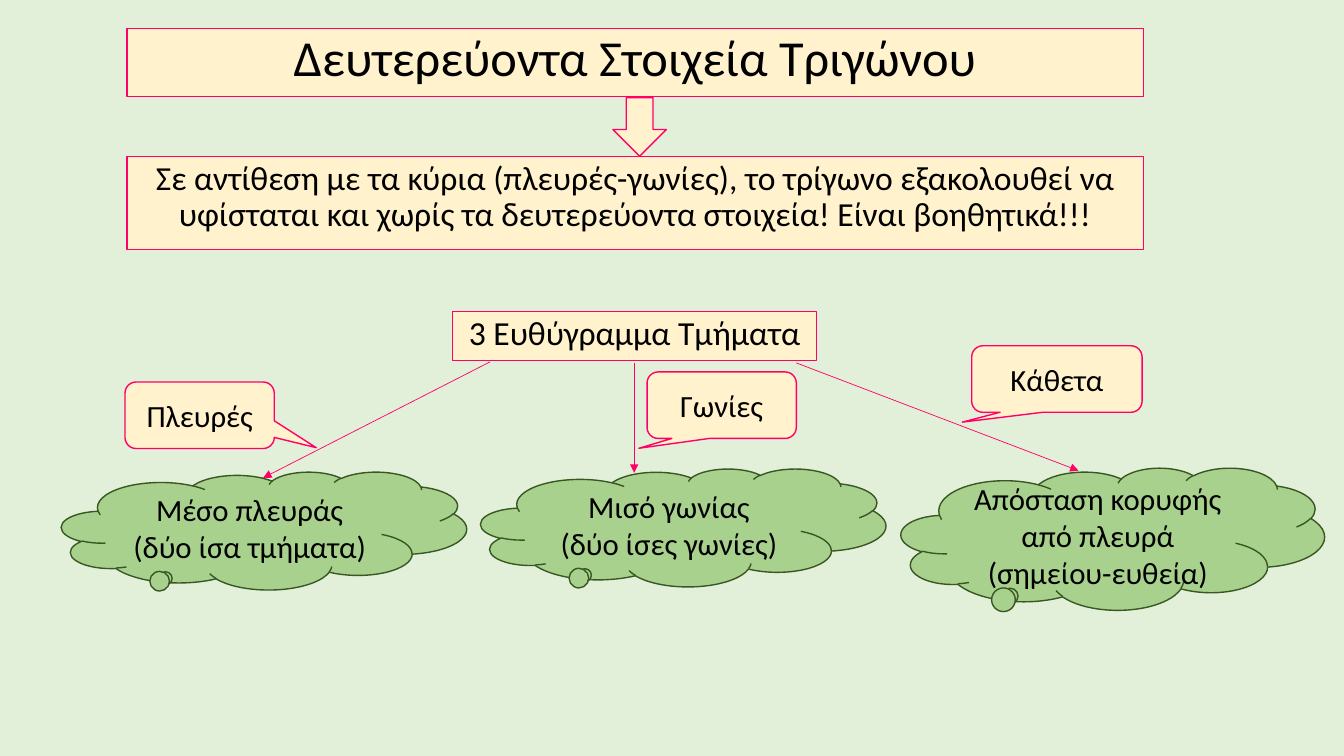
import pptx
import pptx.util
import pptx.dml.color
import pptx.enum.shapes
import pptx.enum.text
import pptx.oxml
import pptx.oxml.ns
from dataclasses import dataclass

Pt = pptx.util.Pt
Kind = pptx.enum.shapes.MSO_SHAPE
Anchor = pptx.enum.text.MSO_ANCHOR


@dataclass
class Theme:
    font: str = "Calibri"
    back: str = "E2F0D9"
    cream: str = "FFF2CC"
    pink: str = "FF0066"
    green: str = "A9D18E"
    dark: str = "385723"
    ink: str = "000000"
    title: float = 36
    body: float = 24
    note: float = 22
    thin: float = 0.5
    edge: float = 0.75
    bold: float = 1


def color(code):
    return pptx.dml.color.RGBColor.from_string(code)


class Page:
    def __init__(self, deck, theme):
        self.theme = theme
        self.slide = deck.slides.add_slide(deck.slide_layouts[6])
        fill = self.slide.background.fill
        fill.solid()
        fill.fore_color.rgb = color(theme.back)

    def shape(self, kind, place, fill, line, width, adjust=()):
        item = self.slide.shapes.add_shape(kind, *map(Pt, place))
        item.shadow.inherit = False
        item.fill.solid()
        item.fill.fore_color.rgb = color(fill)
        item.line.color.rgb = color(line)
        item.line.width = Pt(width)
        for index, value in enumerate(adjust):
            item.adjustments[index] = value
        return item

    def words(self, item, lines, size, anchor, spacing):
        frame = item.text_frame
        frame.word_wrap = True
        frame.vertical_anchor = anchor
        for index, line in enumerate(lines):
            para = frame.paragraphs[0] if index == 0 else frame.add_paragraph()
            para.alignment = pptx.enum.text.PP_ALIGN.CENTER
            para.line_spacing = spacing
            run = para.add_run()
            run.text = line
            run.font.name = self.theme.font
            run.font.size = Pt(size)
            run.font.color.rgb = color(self.theme.ink)

    def box(self, place, text, size):
        look = self.theme
        item = self.shape(Kind.RECTANGLE, place, look.cream, look.pink, look.edge)
        self.words(item, [text], size, Anchor.TOP, 0.9)

    def block(self, place):
        look = self.theme
        self.shape(Kind.DOWN_ARROW, place, look.cream, look.pink, look.bold)

    def label(self, place, tip, text):
        look = self.theme
        item = self.shape(Kind.ROUNDED_RECTANGULAR_CALLOUT, place, look.cream,
                          look.pink, look.bold, (*tip, 0.167))
        self.words(item, [text], look.note, Anchor.MIDDLE, 1.0)

    def cloud(self, place, lines):
        look = self.theme
        item = self.shape(Kind.CLOUD_CALLOUT, place, look.green, look.dark,
                          look.bold, (-0.243, 0.404))
        self.words(item, lines, look.note, Anchor.MIDDLE, 1.0)

    def arrow(self, start, end):
        item = self.slide.shapes.add_connector(
            pptx.enum.shapes.MSO_CONNECTOR.STRAIGHT, *map(Pt, (*start, *end)))
        item.line.color.rgb = color(self.theme.pink)
        item.line.width = Pt(self.theme.thin)
        # Arrowhead, and no shadow
        props = item._element.spPr
        head = props.makeelement(pptx.oxml.ns.qn("a:tailEnd"), {"type": "triangle"})
        props.find(pptx.oxml.ns.qn("a:ln")).append(head)
        props.append(props.makeelement(pptx.oxml.ns.qn("a:effectLst"), {}))


def main():
    deck = pptx.Presentation()
    deck.slide_width, deck.slide_height = Pt(960), Pt(540)
    theme = Theme()
    page = Page(deck, theme)

    # Title, remark and the arrow between them
    left, width = 90.7, 725.8
    page.box((left, 20.2, width, 49), "Δευτερεύοντα Στοιχεία Τριγώνου", theme.title)
    page.box((left, 111.6, width, 67),
             "Σε αντίθεση με τα κύρια (πλευρές-γωνίες), το τρίγωνο εξακολουθεί να "
             "υφίσταται και χωρίς τα δευτερεύοντα στοιχεία! Είναι βοηθητικά!!!",
             theme.body)
    page.block((437.8, 69.8, 38.2, 41.8))

    # Root of the three branches
    page.box((323.3, 222.5, 260, 35.3), "3 Ευθύγραμμα Τμήματα", theme.body)

    # Each branch: arrow ends, label with its tip, cloud
    branches = [
        ((350, 258.5), (188, 341.3),
         (89.3, 272.9, 106.6, 47.5), (0.781, 0.487), "Πλευρές",
         (43.9, 337, 289.4, 84.2), ["Μέσο πλευράς", "(δύο ίσα τμήματα)"]),
        ((453, 259.2), (453, 337.7),
         (462.2, 265.7, 106.6, 47.5), (-0.555, 0.648), "Γωνίες",
         (343.4, 334.8, 289.4, 84.2), ["Μισό γωνίας", "(δύο ίσες γωνίες)"]),
        ((568.8, 259.2), (770.4, 336.2),
         (694.1, 247, 121.7, 47.5), (-0.555, 0.648), "Κάθετα",
         (643.7, 334.1, 302.4, 101.5),
         ["Απόσταση κορυφής από πλευρά (σημείου-ευθεία)"]),
    ]
    for start, end, spot, tip, text, place, lines in branches:
        page.arrow(start, end)
        page.label(spot, tip, text)
        page.cloud(place, lines)

    deck.save("out.pptx")


if __name__ == "__main__":
    main()
